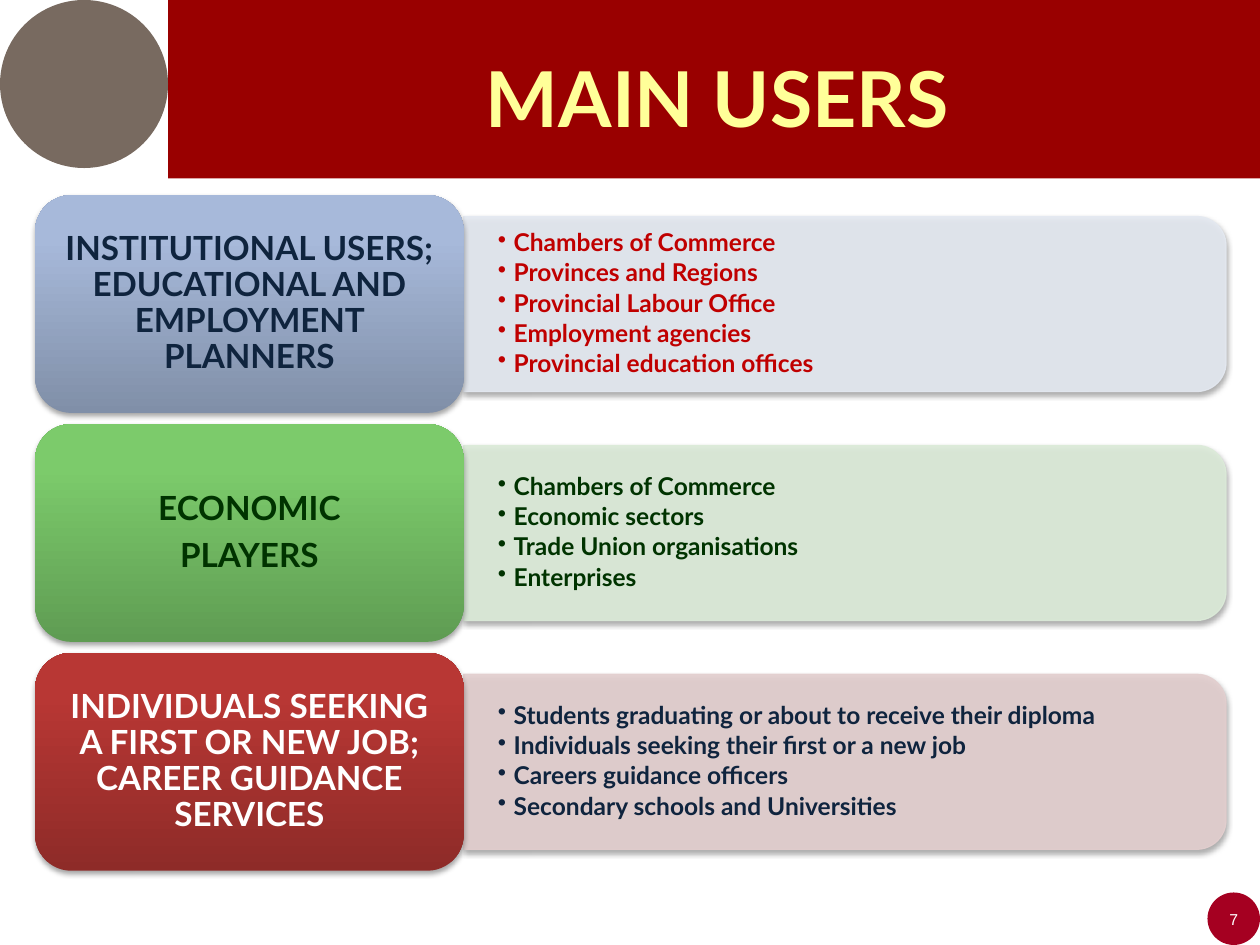
from pptx import Presentation
from pptx.dml.color import RGBColor
from pptx.enum.shapes import MSO_SHAPE
from pptx.enum.text import MSO_ANCHOR, MSO_AUTO_SIZE, PP_ALIGN
from pptx.oxml import parse_xml
from pptx.oxml.ns import nsdecls
from pptx.util import Pt

COLORS = {
    "band": "990000", "title": "FFFF99", "emblem": "786A60", "number": "A50021",
    "white": "FFFFFF", "navy": "0F243E", "red": "C00000", "green": "003300",
}

# Rows: label paragraphs, side inset, label colour, gradient from bottom to top,
# panel colour, list colour, list items
ROWS = [
    (["INSTITUTIONAL USERS; EDUCATIONAL AND EMPLOYMENT PLANNERS"], 0, "navy",
     ["808FA8", "A7B9DA", "A6BADC"], "E4E9F1", "red",
     ["Chambers of Commerce", "Provinces and Regions", "Provincial Labour Office",
      "Employment agencies", "Provincial education offices"]),
    (["ECONOMIC", "PLAYERS"], 6, "green",
     ["5F9C53", "7CCB6B", "7BCD6A"], "DCEBD9", "green",
     ["Chambers of Commerce", "Economic sectors", "Trade Union organisations",
      "Enterprises"]),
    (["INDIVIDUALS SEEKING A FIRST OR NEW JOB; CAREER GUIDANCE SERVICES"], 6, "white",
     ["8E2B28", "B83734", "BB3531"], "E3CFCF", "navy",
     ["Students graduating or about to receive their diploma",
      "Individuals seeking their first or a new job", "Careers guidance officers",
      "Secondary schools and Universities"]),
]
STOPS = [0, 80000, 100000]
SHADOW = (
    f'<a:effectLst {nsdecls("a")}><a:outerShdw blurRad="40000" dist="23000" '
    'dir="5400000" rotWithShape="0"><a:srgbClr val="000000"><a:alpha val="35000"/>'
    '</a:srgbClr></a:outerShdw></a:effectLst>'
)

deck = Presentation()
deck.slide_width, deck.slide_height = Pt(720), Pt(540)
slide = deck.slides.add_slide(deck.slide_layouts[5])
shapes = slide.shapes


def add_block(kind, left, top, width, height, color=None):
    """Add a preset shape without outline; filled when a colour is given."""
    block = shapes.add_shape(kind, Pt(left), Pt(top), Pt(width), Pt(height))
    block.line.fill.background()
    if color:
        block.fill.solid()
        block.fill.fore_color.rgb = RGBColor.from_string(color)
    return block


def write(box, lines, size, color, insets, font="Lato", bold=True,
          align=PP_ALIGN.CENTER, line_spacing=1.0, space_after=0, bullet=False):
    """Fill a text frame with equally formatted paragraphs."""
    frame = box.text_frame
    side, edge = insets
    frame_format = {
        "word_wrap": True, "auto_size": MSO_AUTO_SIZE.NONE,
        "vertical_anchor": MSO_ANCHOR.MIDDLE,
        "margin_left": Pt(side), "margin_right": Pt(side),
        "margin_top": Pt(edge), "margin_bottom": Pt(edge),
    }
    for name, value in frame_format.items():
        setattr(frame, name, value)
    for index, line in enumerate(lines):
        para = frame.add_paragraph() if index else frame.paragraphs[0]
        para_format = {"alignment": align, "line_spacing": line_spacing,
                       "space_before": Pt(0), "space_after": Pt(space_after)}
        for name, value in para_format.items():
            setattr(para, name, value)
        if bullet:
            properties = para._p.get_or_add_pPr()
            properties.set("marL", str(Pt(9)))
            properties.set("indent", str(Pt(-9)))
            properties.append(parse_xml(f'<a:buChar {nsdecls("a")} char="•"/>'))
        span = para.add_run()
        span.text = line
        for name, value in {"name": font, "size": Pt(size), "bold": bold}.items():
            setattr(span.font, name, value)
        span.font.color.rgb = RGBColor.from_string(COLORS[color])


# Header band, emblem and page number
band = add_block(MSO_SHAPE.RECTANGLE, 96, 0, 624, 102, COLORS["band"])
emblem = add_block(MSO_SHAPE.OVAL, 0, 0, 96, 96, COLORS["emblem"])
number = add_block(MSO_SHAPE.OVAL, 690, 510, 30, 30, COLORS["number"])
for block in (band, emblem, number):
    block.shadow.inherit = False
write(number, ["7"], 9, "white", (0, 0), font="Arial", bold=False)

# Title, brought in front of the band
title = shapes.title
for name, value in {"left": 100, "top": 25, "width": 620, "height": 60}.items():
    setattr(title, name, Pt(value))
write(title, ["MAIN USERS"], 44, "title", (6.5, 3))
shapes._spTree.append(title._element)

# User groups: label on the left, panel with list on the right
LABEL_LEFT, LABEL_WIDTH, LABEL_HEIGHT = 20, 245, 124.5
FIRST_TOP, PITCH = 111.5, 130.8
PANEL_LEFT, PANEL_WIDTH, PANEL_HEIGHT = LABEL_LEFT + LABEL_WIDTH, 435.6, 100
LIST_WIDTH, LIST_HEIGHT = 430.5, 90

for row, (label_lines, inset, label_color, gradient, panel_color, list_color,
          items) in enumerate(ROWS):
    top = FIRST_TOP + row * PITCH
    middle = top + LABEL_HEIGHT / 2

    # Panel: top-rounded rectangle turned to round its right side
    panel = add_block(MSO_SHAPE.ROUND_2_SAME_RECTANGLE,
                      PANEL_LEFT + (PANEL_WIDTH - PANEL_HEIGHT) / 2,
                      middle - PANEL_WIDTH / 2, PANEL_HEIGHT, PANEL_WIDTH, panel_color)
    panel.rotation = 90
    panel.line.color.rgb = RGBColor.from_string(panel_color)
    panel.line.width = Pt(0.75)
    for color_element in panel._element.spPr.xpath(".//a:srgbClr"):
        color_element.append(parse_xml(f'<a:alpha {nsdecls("a")} val="90000"/>'))

    # List
    list_box = shapes.add_textbox(Pt(PANEL_LEFT), Pt(middle - LIST_HEIGHT / 2),
                                  Pt(LIST_WIDTH), Pt(LIST_HEIGHT))
    write(list_box, items, 14, list_color, (19.5, 10), align=PP_ALIGN.LEFT,
          line_spacing=0.9, space_after=2.1, bullet=True)

    # Label with gradient
    label = add_block(MSO_SHAPE.ROUNDED_RECTANGLE, LABEL_LEFT, top,
                      LABEL_WIDTH, LABEL_HEIGHT)
    stops = "".join(f'<a:gs pos="{position}"><a:srgbClr val="{color}"/></a:gs>'
                    for position, color in zip(STOPS, gradient))
    label._element.spPr.insert(2, parse_xml(
        f'<a:gradFill {nsdecls("a")} rotWithShape="1"><a:gsLst>{stops}</a:gsLst>'
        '<a:lin ang="16200000" scaled="0"/></a:gradFill>'))
    write(label, label_lines, 19, label_color, (inset, 3),
          line_spacing=0.9, space_after=6.5)

    for block in (panel, label):
        block._element.spPr.append(parse_xml(SHADOW))

deck.save("out.pptx")
